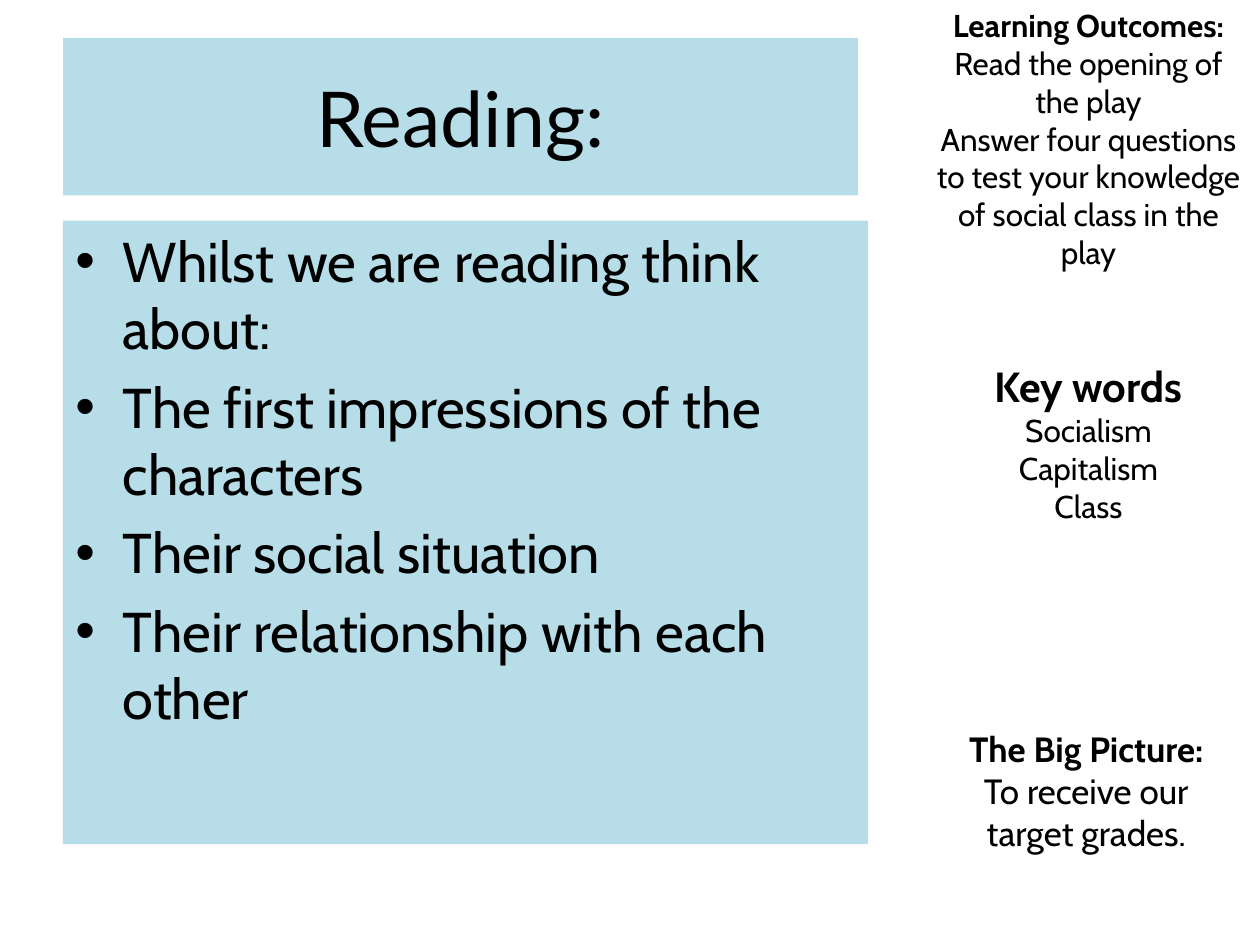
from dataclasses import dataclass

from lxml.etree import SubElement
from pptx import Presentation
from pptx.dml.color import RGBColor
from pptx.enum.shapes import MSO_SHAPE
from pptx.enum.text import MSO_ANCHOR, MSO_AUTO_SIZE, PP_ALIGN
from pptx.oxml.ns import qn
from pptx.util import Pt


@dataclass(frozen=True)
class Theme:
    ink: RGBColor = RGBColor(0x00, 0x00, 0x00)
    panel: RGBColor = RGBColor(0xB7, 0xDE, 0xE8)
    title_font: str = "Lato"
    body_font: str = "Cabin"
    title: int = 44
    body: int = 32
    key_heading: int = 24
    goal: int = 20
    note: int = 18
    indent: int = 27
    bullet_gap: float = 6.4


class LessonSlide:
    def __init__(self, slide, theme):
        self.slide = slide
        self.theme = theme

    def add_text(self, paragraph, text, size, font=None, bold=False):
        run = paragraph.add_run()
        run.text = text
        run.font.name = font or self.theme.body_font
        run.font.size = Pt(size)
        run.font.bold = bold
        run.font.color.rgb = self.theme.ink

    def paragraphs(self, frame, count):
        return [frame.paragraphs[0]] + [frame.add_paragraph() for _ in range(count - 1)]

    def panel(self, left, top, width, height, anchor):
        panel = self.slide.shapes.add_shape(
            MSO_SHAPE.RECTANGLE, Pt(left), Pt(top), Pt(width), Pt(height))
        panel.shadow.inherit = False
        panel.fill.solid()
        panel.fill.fore_color.rgb = self.theme.panel
        panel.line.fill.background()
        panel.text_frame.word_wrap = True
        panel.text_frame.vertical_anchor = anchor
        return panel.text_frame

    def title(self, text, *place):
        heading = self.panel(*place, MSO_ANCHOR.MIDDLE).paragraphs[0]
        heading.alignment = PP_ALIGN.CENTER
        self.add_text(heading, text, self.theme.title, self.theme.title_font)

    def bullets(self, points, *place):
        frame = self.panel(*place, MSO_ANCHOR.TOP)
        indent = Pt(self.theme.indent)
        for index, (paragraph, point) in enumerate(
                zip(self.paragraphs(frame, len(points)), points)):
            properties = paragraph._p.get_or_add_pPr()
            properties.set("marL", str(indent))
            properties.set("indent", str(-indent))
            SubElement(properties, qn("a:buFont")).set("typeface", "Arial")
            SubElement(properties, qn("a:buChar")).set("char", "•")
            paragraph.alignment = PP_ALIGN.LEFT
            if index:
                paragraph.space_before = Pt(self.theme.bullet_gap)
            self.add_text(paragraph, point, self.theme.body)

    def side_note(self, heading, lines, heading_size, line_size, *place):
        note = self.slide.shapes.add_textbox(*map(Pt, place))
        frame = note.text_frame
        frame.word_wrap = True
        frame.auto_size = MSO_AUTO_SIZE.SHAPE_TO_FIT_TEXT
        first, *rest = self.paragraphs(frame, len(lines) + 1)
        self.add_text(first, heading, heading_size, bold=True)
        for paragraph, line in zip(rest, lines):
            self.add_text(paragraph, line, line_size)
        for paragraph in frame.paragraphs:
            paragraph.alignment = PP_ALIGN.CENTER


def main():
    deck = Presentation()
    deck.slide_width, deck.slide_height = Pt(720), Pt(540)
    theme = Theme()
    lesson = LessonSlide(deck.slides.add_slide(deck.slide_layouts[6]), theme)

    lesson.side_note("The Big Picture:", ["To receive our target grades."],
                     theme.goal, theme.goal, 530, 412, 181.5, 80)
    lesson.title("Reading:", 36, 21.6, 454.3, 90)
    lesson.bullets([
        "Whilst we are reading think about:",
        "The first impressions of the characters",
        "Their social situation",
        "Their relationship with each other",
    ], 36, 126, 460, 356.4)
    lesson.side_note("Learning Outcomes:", [
        "Read the opening of the play",
        "Answer four questions to test your knowledge of social class in the play",
    ], theme.note, theme.note, 524, 0, 196, 193)
    lesson.side_note("Key words", ["Socialism", "Capitalism", "Class"],
                     theme.key_heading, theme.note, 524, 202.5, 196, 101.5)

    deck.save("out.pptx")


if __name__ == "__main__":
    main()
